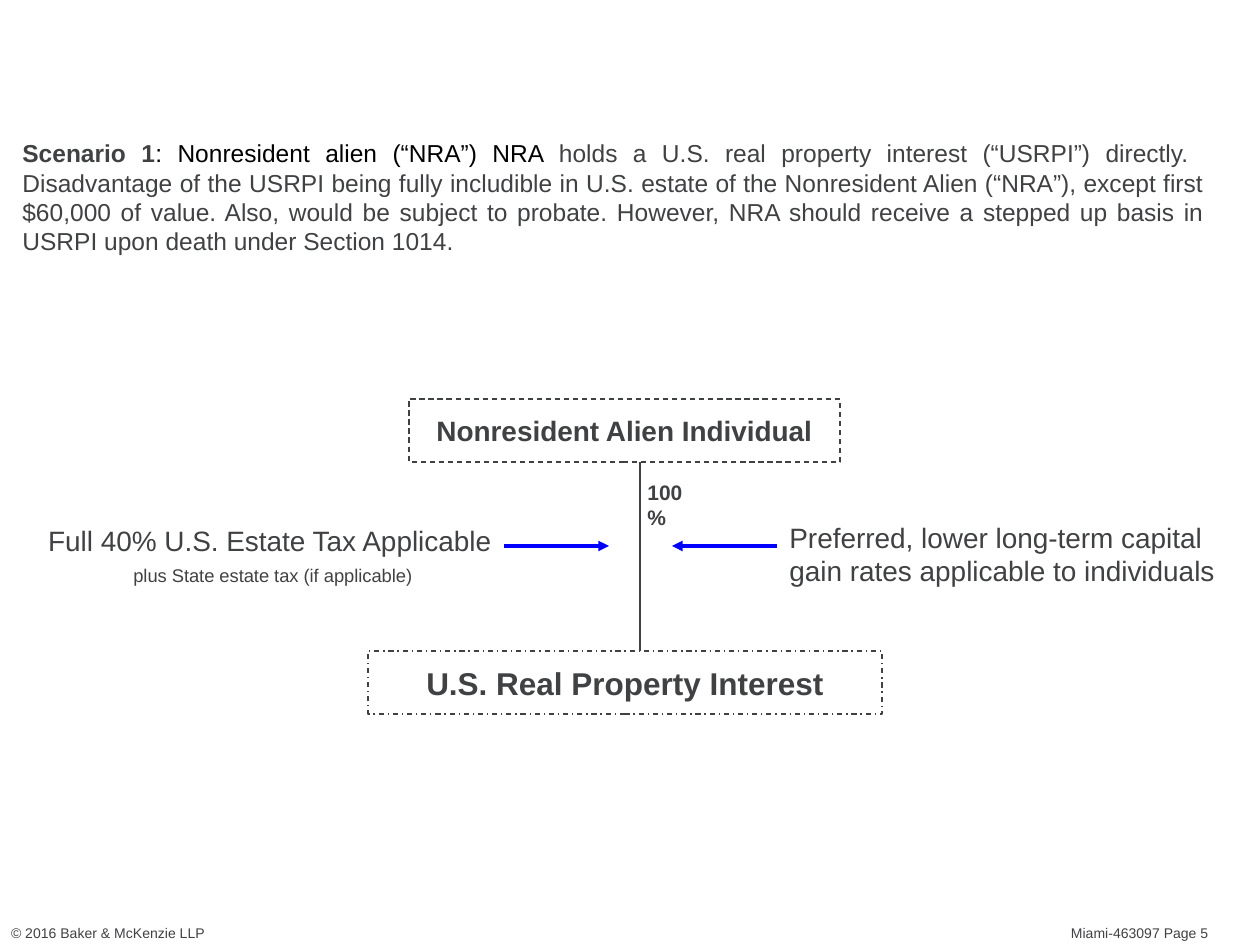
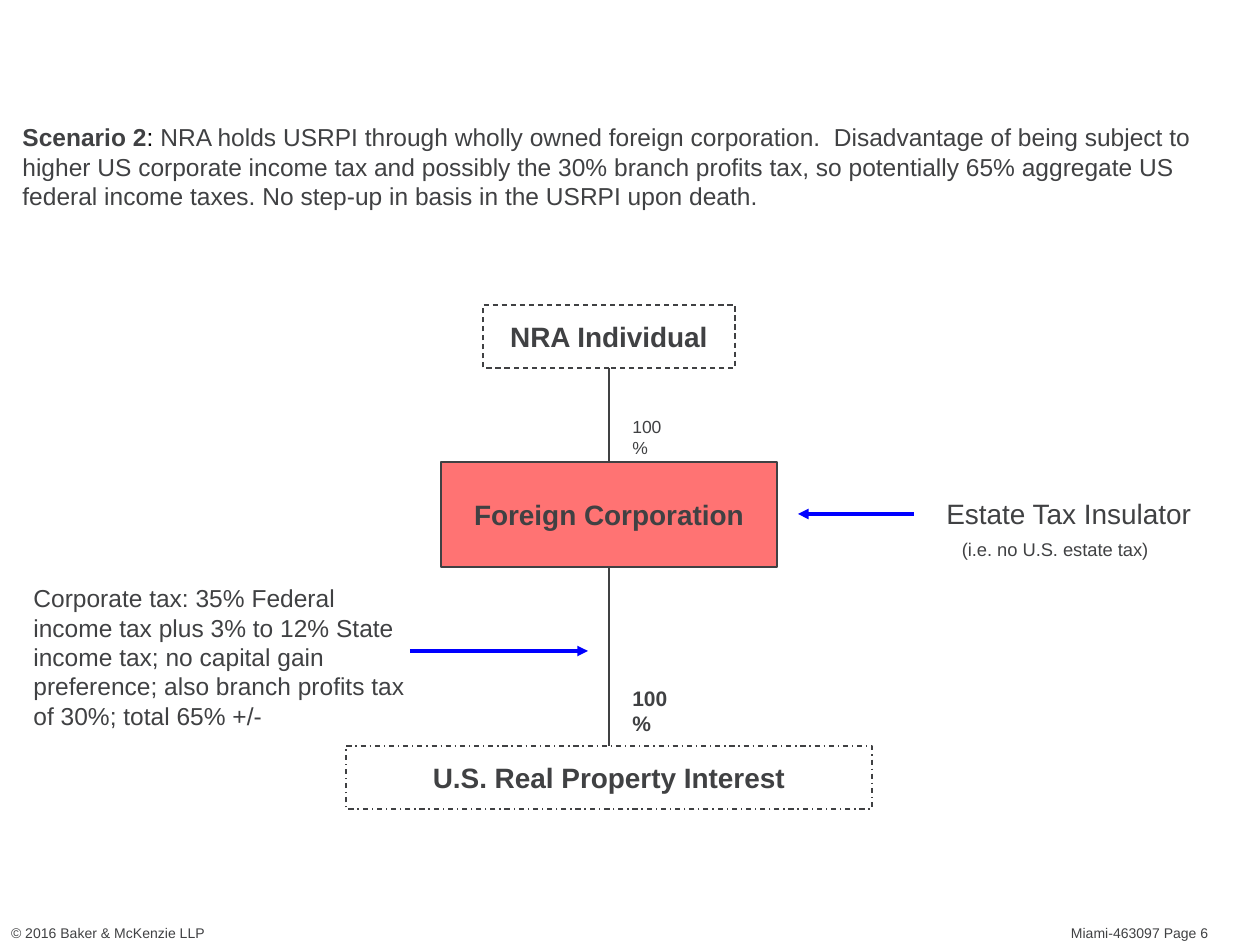
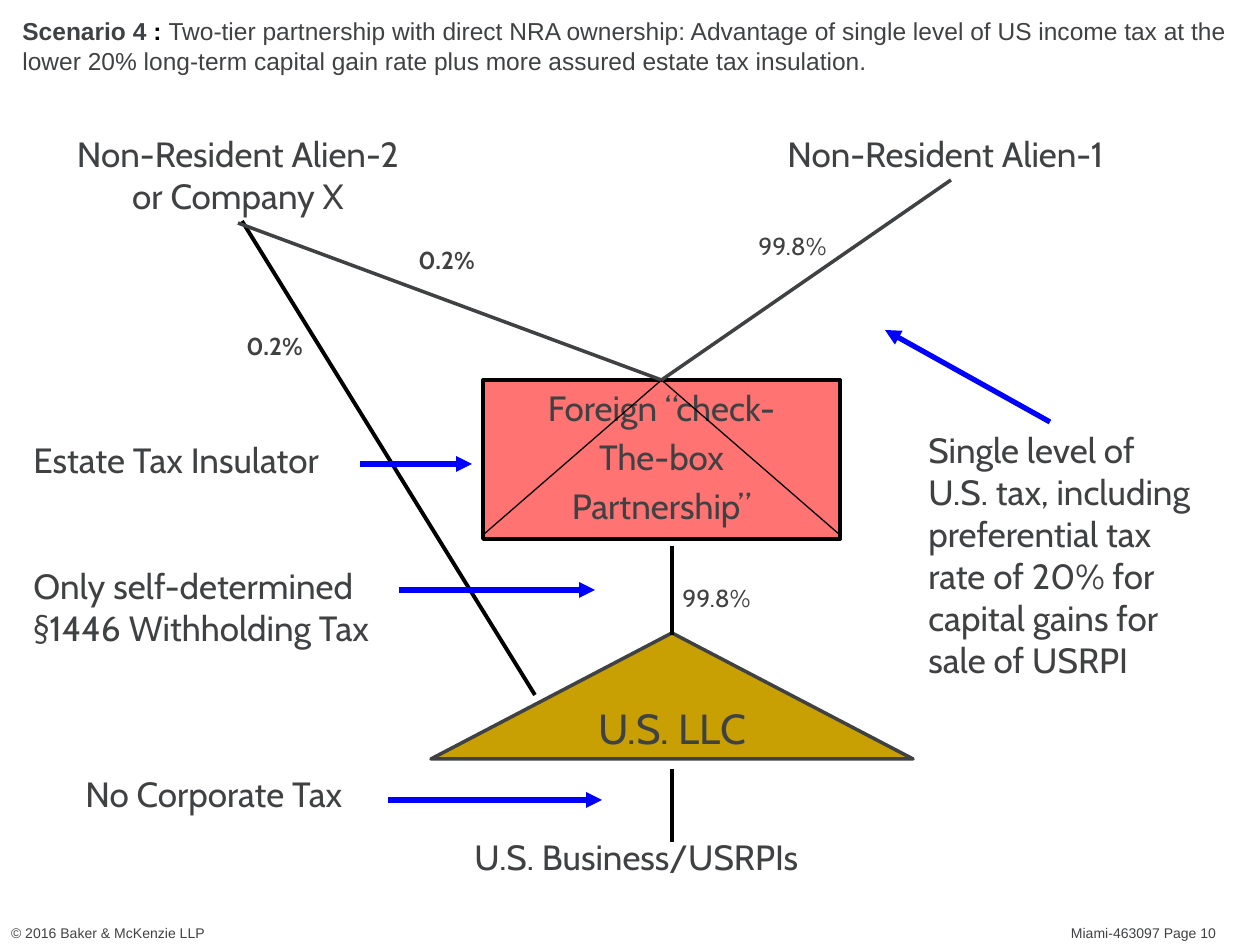
from lxml import etree
from pptx import Presentation
from pptx.dml.color import RGBColor
from pptx.enum.dml import MSO_LINE
from pptx.enum.shapes import MSO_CONNECTOR, MSO_SHAPE
from pptx.enum.text import MSO_ANCHOR, MSO_AUTO_SIZE, PP_ALIGN
from pptx.oxml.ns import qn
from pptx.util import Emu, Pt

INK = RGBColor(0x40, 0x41, 0x43)
BLACK = RGBColor(0, 0, 0)
BLUE = RGBColor(0, 0, 0xFF)
CORAL = RGBColor(0xFF, 0x73, 0x73)
GOLD = RGBColor(0xC8, 0xA0, 0x04)
ARIAL, CABIN = "Arial", "Cabin"
LEFT, CENTER, RIGHT, JUSTIFY = PP_ALIGN.LEFT, PP_ALIGN.CENTER, PP_ALIGN.RIGHT, PP_ALIGN.JUSTIFY
DASH, DASH_DOT = MSO_LINE.DASH, MSO_LINE.DASH_DOT
RECT, TRIANGLE = MSO_SHAPE.RECTANGLE, MSO_SHAPE.ISOSCELES_TRIANGLE
STRAIGHT = MSO_CONNECTOR.STRAIGHT
FIT, TOP, MIDDLE = MSO_AUTO_SIZE.SHAPE_TO_FIT_TEXT, MSO_ANCHOR.TOP, MSO_ANCHOR.MIDDLE
TOP_SIDE, BOTTOM_SIDE = 0, 2
BLANK_LAYOUT = 6


def px(n):
    """Turn px into EMU at 126 px to the inch."""
    return Emu(round(n * 914400 / 126))


def write(tf, paragraphs, size, font=ARIAL, bold=False, align=LEFT, gap=0):
    """Fill a text frame; a paragraph is a string or a list of (text, bold, colour) runs."""
    for i, runs in enumerate(paragraphs):
        p = tf.paragraphs[0] if i == 0 else tf.add_paragraph()
        p.alignment = align
        if i and gap:
            p.space_before = Pt(gap)
        if isinstance(runs, str):
            runs = [(runs, bold, INK)]
        for text, run_bold, color in runs:
            r = p.add_run()
            r.text = text
            r.font.name, r.font.size = font, Pt(size)
            r.font.bold, r.font.color.rgb = run_bold, color


def label(slide, box, paragraphs, size, font=ARIAL, wrap=False, margin=None, **style):
    """Add a text box that grows with its text."""
    sp = slide.shapes.add_textbox(*map(px, box))
    tf = sp.text_frame
    tf.word_wrap, tf.auto_size = wrap, FIT
    if margin is not None:
        tf.margin_left = tf.margin_right = tf.margin_top = tf.margin_bottom = margin
    write(tf, paragraphs, size, font, **style)


def entity(slide, box, paragraphs, size, kind=RECT, fill=None, color=INK, width=0.75,
           dash=None, anchor=MIDDLE, wrap=False, **style):
    """Add an outlined shape for an owner, entity or property."""
    sp = slide.shapes.add_shape(kind, *map(px, box))
    sp.shadow.inherit = False
    if fill is None:
        sp.fill.background()
    else:
        sp.fill.solid()
        sp.fill.fore_color.rgb = fill
    sp.line.color.rgb, sp.line.width = color, Pt(width)
    if dash is not None:
        sp.line.dash_style = dash
    sp.text_frame.word_wrap, sp.text_frame.vertical_anchor = wrap, anchor
    write(sp.text_frame, paragraphs, size, align=CENTER, **style)
    return sp


def line(slide, points, color=INK, width=0.75, begin=None, end=None):
    """Add a straight line, joined to (shape, side) at an end where given."""
    cx = slide.shapes.add_connector(STRAIGHT, *map(px, points))
    cx.line.color.rgb, cx.line.width = color, Pt(width)
    if begin:
        cx.begin_connect(*begin)
    if end:
        cx.end_connect(*end)
    etree.SubElement(cx._element.spPr, qn("a:effectLst"))
    return cx


def arrow(slide, points, width):
    """Add a blue arrow that points from a remark to the structure."""
    cx = line(slide, points, BLUE, width)
    etree.SubElement(cx.line._get_or_add_ln(), qn("a:tailEnd"), type="triangle")


def ownership(slide, owner, owned, width=0.75):
    """Join the bottom of an owner to the top of what it owns."""
    line(slide, (0, 0, 0, 0), INK, width, (owner, BOTTOM_SIDE), (owned, TOP_SIDE))


def scenario(slide, box, runs, align=LEFT):
    """Add the paragraph that describes the scenario."""
    label(slide, box, [runs], 14, wrap=True, align=align)


def new_slide(prs, page):
    """Add a blank slide with the copyright line and page number."""
    slide = prs.slides.add_slide(prs.slide_layouts[BLANK_LAYOUT])
    for x, w, text in ((11, 1091, "© 2016 Baker & McKenzie LLP"),
                       (1071, 189, f"Miami-463097 Page {page}")):
        label(slide, (x, 924, w, 18), [text], 8, wrap=True, margin=0)
    return slide


def direct_holding(prs):
    """Build scenario 1: the individual holds the property directly."""
    s = new_slide(prs, 5)
    scenario(s, (10, 132, 1207, 131), [
        ("Scenario 1", True, INK),
        (": Nonresident alien (“NRA”) NRA ", False, BLACK),
        ("holds a U.S. real property interest (“USRPI”) directly.  Disadvantage of the USRPI "
         "being fully includible in U.S. estate of the Nonresident Alien (“NRA”), except first "
         "$60,000 of value. Also, would be subject to probate. However, NRA should receive a "
         "stepped up basis in USRPI upon death under Section 1014.", False, INK)], JUSTIFY)
    entity(s, (409, 399, 431, 63), ["Nonresident Alien Individual"], 16, dash=DASH, bold=True)
    entity(s, (368, 651, 514, 63), ["U.S. Real Property Interest"], 18, dash=DASH_DOT, bold=True)
    line(s, (640, 462, 640, 651))
    label(s, (635, 473, 78, 38), ["100%"], 12, bold=True)
    label(s, (-10, 517, 514, 47), ["Full 40% U.S. Estate Tax Applicable"], 16,
          wrap=True, align=RIGHT)
    label(s, (10, 558, 415, 35), ["plus State estate tax (if applicable)"], 10.5,
          wrap=True, align=RIGHT)
    label(s, (777, 514, 483, 81),
          ["Preferred, lower long-term capital gain rates applicable to individuals"], 16,
          wrap=True)
    arrow(s, (504, 546, 609, 546), 2)
    arrow(s, (777, 546, 672, 546), 2)


def foreign_corporation(prs):
    """Build scenario 2: a foreign corporation holds the property."""
    s = new_slide(prs, 6)
    scenario(s, (10, 116, 1229, 102), [
        ("Scenario 2", True, INK), (": ", False, BLACK),
        ("NRA holds USRPI through wholly owned foreign corporation.  Disadvantage of being "
         "subject to higher US corporate income tax and possibly the 30% branch profits tax, so "
         "potentially 65% aggregate US federal income taxes. No step-up in basis in the USRPI "
         "upon death.", False, INK)])
    owner = entity(s, (483, 305, 252, 63), ["NRA Individual"], 16, dash=DASH, bold=True)
    company = entity(s, (441, 462, 336, 105), ["Foreign Corporation"], 16, fill=CORAL, bold=True)
    realty = entity(s, (346, 746, 526, 63), ["U.S. Real Property Interest"], 16,
                    dash=DASH_DOT, bold=True)
    ownership(s, owner, company)
    ownership(s, company, realty)
    label(s, (620, 410, 69, 34), ["100%"], 10)
    label(s, (620, 679, 78, 38), ["100%"], 12, bold=True)
    label(s, (934, 490, 275, 47), ["Estate Tax Insulator"], 16)
    label(s, (924, 532, 237, 35), ["(i.e. no U.S. estate tax)"], 10.5, wrap=True, align=RIGHT)
    label(s, (21, 577, 410, 161),
          ["Corporate tax: 35% Federal income tax plus 3% to 12% State income tax; no capital "
           "gain preference; also branch profits tax of 30%; total 65% +/-"], 14, wrap=True)
    arrow(s, (914, 514, 798, 514), 2)
    arrow(s, (410, 651, 588, 651), 2)


def two_tier_partnership(prs):
    """Build scenario 4: two partnership tiers under the individuals."""
    s = new_slide(prs, 10)
    scenario(s, (10, 10, 1250, 72), [
        ("Scenario 4 ", True, INK), (": ", True, BLACK),
        ("Two-tier partnership with direct NRA ownership: Advantage of single level of US income "
         "tax at the lower 20% long-term capital gain rate plus more assured estate tax "
         "insulation.", False, INK)])
    line(s, (242, 221, 535, 695), BLACK, 2.25)
    partnership = entity(s, (483, 380, 357, 159), ["Foreign “check-", "The-box", "Partnership”"],
                         20, fill=CORAL, color=BLACK, width=2.25, anchor=TOP, wrap=True,
                         font=CABIN, gap=4)
    entity(s, (431, 633, 482, 126), ["U.S. LLC"], 24, TRIANGLE, GOLD, width=2, font=CABIN)
    peak = (partnership, TOP_SIDE)
    for x, y, color, width in ((483, 535, BLACK, 0.75), (840, 535, BLACK, 0.75),
                               (951, 180, INK, 2), (238, 223, INK, 2)):
        line(s, (661, 380, x, y), color, width, begin=peak)
    for top, bottom in ((546, 635), (769, 842)):
        line(s, (672, top, 672, bottom), BLACK, 2.25)
    for box, paragraphs, align in (
            ((775, 126, 350, 54), ["Non-Resident Alien-1"], LEFT),
            ((63, 126, 350, 97), ["Non-Resident Alien-2", "or Company X"], CENTER),
            ((462, 829, 358, 54), ["U.S. Business/USRPIs"], LEFT),
            ((73, 766, 297, 54), ["No Corporate Tax"], LEFT),
            ((21, 558, 382, 97), ["Only self-determined", "§1446 Withholding Tax"], LEFT),
            ((21, 432, 336, 54), ["Estate Tax Insulator"], LEFT),
            ((916, 422, 318, 267), ["Single level of", "U.S. tax, including", "preferential tax",
                                    "rate of 20% for", "capital gains for", "sale of USRPI"],
             LEFT)):
        label(s, box, paragraphs, 20, CABIN, align=align)
    for x, y, share, bold in ((406, 239, "0.2%", True), (234, 325, "0.2%", True),
                              (746, 225, "99.8%", False), (670, 577, "99.8%", False)):
        label(s, (x, y, 95, 42), [share], 14, CABIN, bold=bold)
    for points in ((360, 464, 472, 464), (399, 590, 595, 590),
                   (388, 800, 602, 800), (1050, 422, 885, 330)):
        arrow(s, points, 3)


def main():
    """Build the deck and save it."""
    prs = Presentation()
    prs.slide_width, prs.slide_height = px(1260), px(945)
    direct_holding(prs)
    foreign_corporation(prs)
    two_tier_partnership(prs)
    prs.save("out.pptx")


if __name__ == "__main__":
    main()
